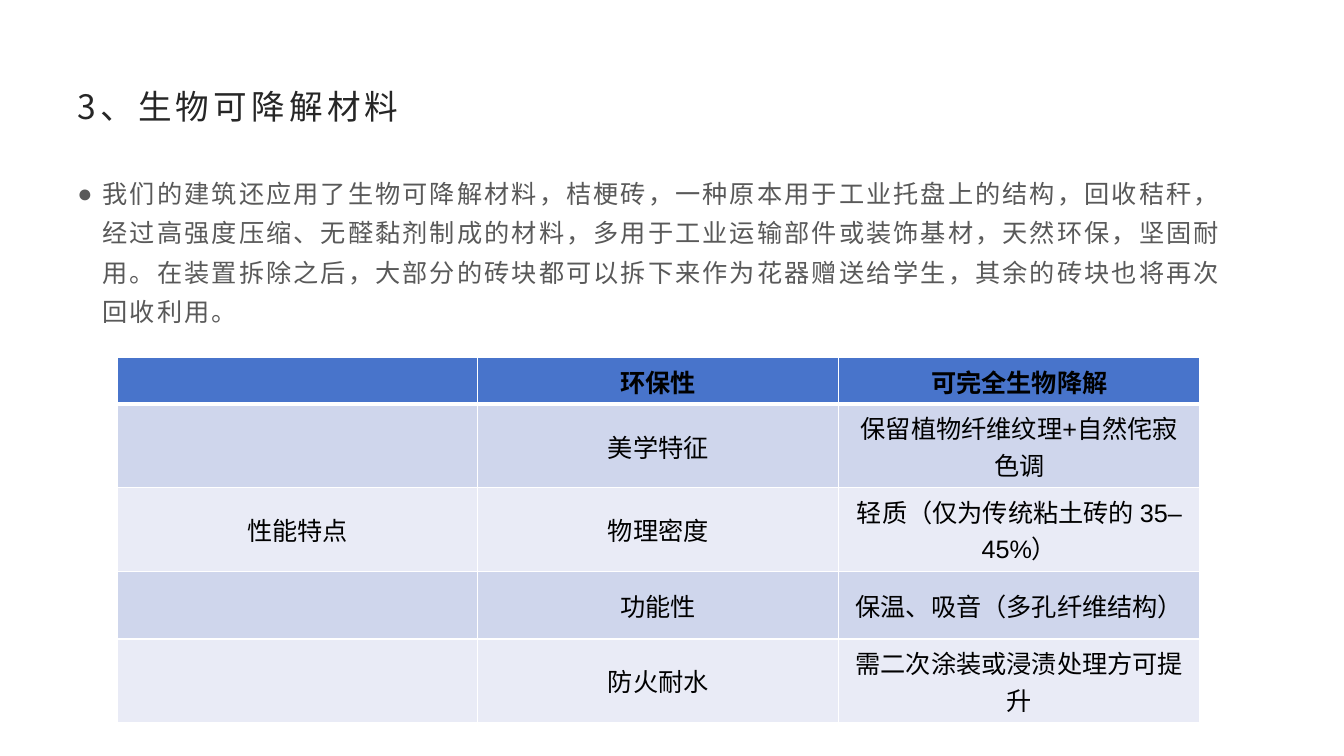
from dataclasses import dataclass

from lxml import etree
from pptx import Presentation, util as u
from pptx.dml.color import RGBColor
from pptx.enum import text
from pptx.oxml import ns

Inches = u.Inches


@dataclass(frozen=True)
class Theme:
    latin: str = "Arial"
    east_asian: str = "Noto Sans CJK SC"
    title_size: int = 24
    body_size: int = 18
    title: str = "262626"
    body: str = "595959"
    cell: str = "000000"
    header_fill: str = "4874CB"
    band_fills: tuple = ("CFD6EC", "E9EBF6")
    border: str = "FFFFFF"


THEME = Theme()

TITLE = "3、生物可降解材料"
BODY = (
    "我们的建筑还应用了生物可降解材料，桔梗砖，一种原本用于工业托盘上的结构，回收秸秆，"
    "经过高强度压缩、无醛黏剂制成的材料，多用于工业运输部件或装饰基材，天然环保，坚固耐用。"
    "在装置拆除之后，大部分的砖块都可以拆下来作为花器赠送给学生，其余的砖块也将再次回收利用。"
)
ROWS = [
    ("", "环保性", "可完全生物降解"),
    ("", "美学特征", "保留植物纤维纹理+自然侘寂色调"),
    ("性能特点", "物理密度", "轻质（仅为传统粘土砖的 35–45%）"),
    ("", "功能性", "保温、吸音（多孔纤维结构）"),
    ("", "防火耐水", "需二次涂装或浸渍处理方可提升"),
]
# Tall enough for one line in the header and two lines in wrapped rows
ROW_HEIGHTS = (0.46, 0.83, 0.83, 0.67, 0.83)
COLUMN_WIDTH = 3.58


def add_child(parent, tag, **attributes):
    return etree.SubElement(parent, ns.qn(tag), attributes)


def write_text(paragraph, content, *, size, color, font=THEME.latin,
               bold=False, spacing=0, align=text.PP_ALIGN.LEFT):
    """Add one formatted run; spacing is in points."""
    paragraph.alignment = align
    run = paragraph.add_run()
    run.text = content
    run.font.size = u.Pt(size)
    run.font.bold = bold
    run.font.color.rgb = RGBColor.from_string(color)
    run.font.name = font
    properties = run._r.get_or_add_rPr()
    add_child(properties, "a:ea", typeface=THEME.east_asian)
    if spacing:
        properties.set("spc", str(int(spacing * 100)))


def add_text_box(slide, left, top, width, height, anchor):
    shape = slide.shapes.add_textbox(
        Inches(left), Inches(top), Inches(width), Inches(height))
    frame = shape.text_frame
    frame.word_wrap = True
    frame.vertical_anchor = anchor
    return frame.paragraphs[0]


def set_bullet(paragraph, character, indent):
    properties = paragraph._p.get_or_add_pPr()
    properties.set("marL", str(Inches(indent)))
    properties.set("indent", str(-Inches(indent)))
    add_child(properties, "a:buFont", typeface=THEME.latin)
    add_child(properties, "a:buChar", char=character)


def set_borders(cell, **widths):
    properties = cell._tc.get_or_add_tcPr()
    for side, width in widths.items():
        line = add_child(properties, f"a:ln{side}", w=str(u.Pt(width)))
        fill = add_child(line, "a:solidFill")
        add_child(fill, "a:srgbClr", val=THEME.border)


def add_property_table(slide, left, top):
    columns = len(ROWS[0])
    table = slide.shapes.add_table(
        len(ROWS), columns, Inches(left), Inches(top),
        Inches(columns * COLUMN_WIDTH), Inches(sum(ROW_HEIGHTS))).table
    for column in table.columns:
        column.width = Inches(COLUMN_WIDTH)

    for r, (values, height) in enumerate(zip(ROWS, ROW_HEIGHTS)):
        table.rows[r].height = Inches(height)
        header = r == 0
        fill = THEME.header_fill if header else THEME.band_fills[(r - 1) % 2]
        for c, value in enumerate(values):
            cell = table.cell(r, c)
            cell.vertical_anchor = text.MSO_ANCHOR.MIDDLE
            # The rule under the header is heavier than the grid
            set_borders(cell, L=1, R=1, T=3 if r == 1 else 1, B=3 if header else 1)
            cell.fill.solid()
            cell.fill.fore_color.rgb = RGBColor.from_string(fill)
            if value:
                write_text(cell.text_frame.paragraphs[0], value,
                           size=THEME.body_size, color=THEME.cell,
                           bold=header, align=text.PP_ALIGN.CENTER)


def main():
    presentation = Presentation()
    presentation.slide_width = Inches(13.33)
    presentation.slide_height = Inches(7.5)
    slide = presentation.slides.add_slide(presentation.slide_layouts[6])

    # Title
    title = add_text_box(slide, 0.67, 0.67, 12, 0.77, text.MSO_ANCHOR.MIDDLE)
    write_text(title, TITLE, size=THEME.title_size, color=THEME.title,
               font=THEME.east_asian, spacing=3)

    # Bulleted description
    body = add_text_box(slide, 0.67, 1.63, 11.79, 1.73, text.MSO_ANCHOR.TOP)
    body.line_spacing = 1.3
    body.space_after = u.Pt(10)
    set_bullet(body, "●", 0.25)
    write_text(body, BODY, size=THEME.body_size, color=THEME.body, spacing=1.5)

    # Material properties
    add_property_table(slide, 1.16, 3.55)

    presentation.save("out.pptx")


if __name__ == "__main__":
    main()
